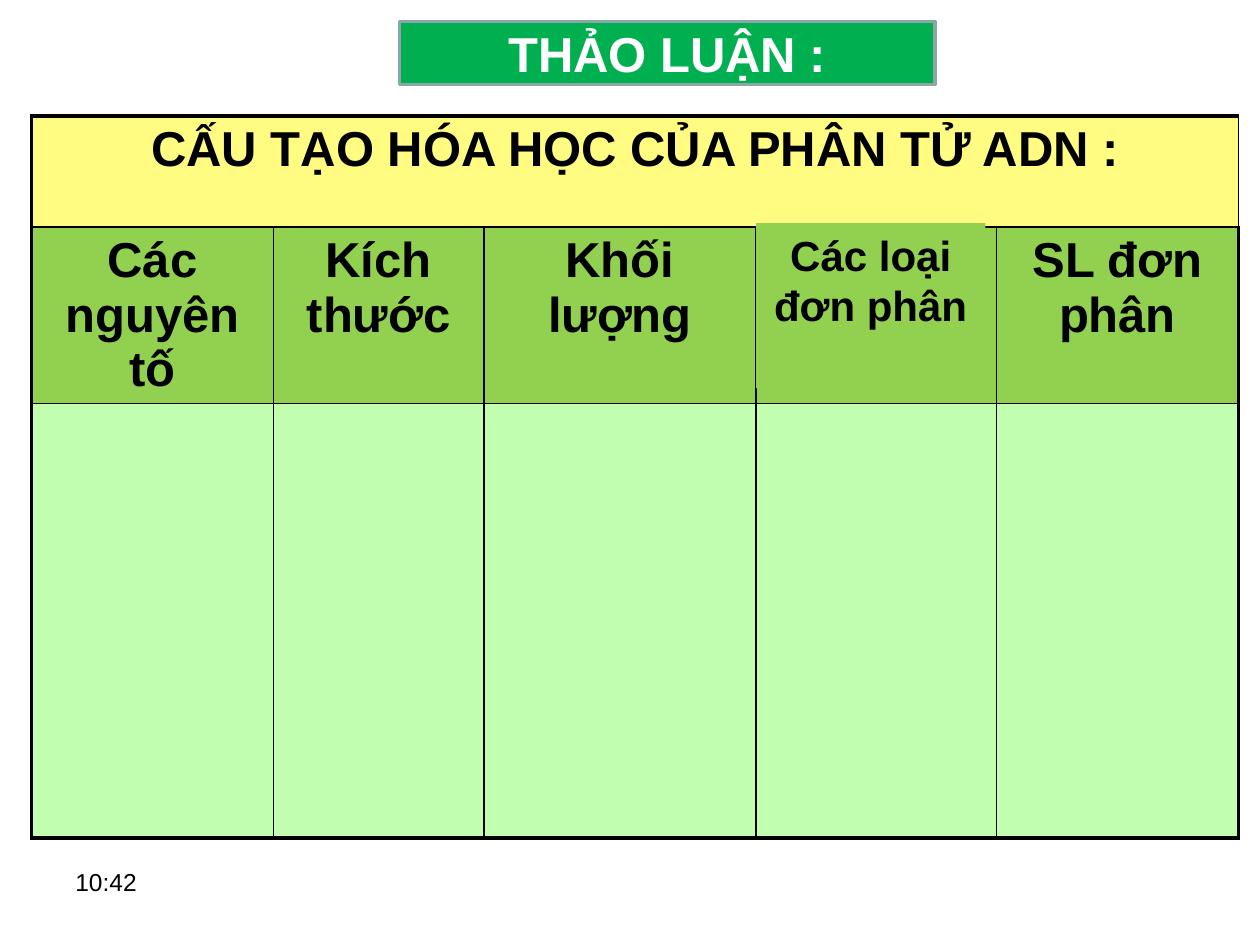
from typing import NamedTuple

from lxml import etree
from pptx import Presentation
from pptx.dml.color import RGBColor
from pptx.enum.shapes import MSO_SHAPE
from pptx.enum.text import MSO_ANCHOR, MSO_AUTO_SIZE, PP_ALIGN
from pptx.oxml.ns import qn
from pptx.util import Inches, Pt

CENTER, LEFT = PP_ALIGN.CENTER, PP_ALIGN.LEFT
TOP, MIDDLE = MSO_ANCHOR.TOP, MSO_ANCHOR.MIDDLE
RECTANGLE = MSO_SHAPE.RECTANGLE
NO_AUTOFIT = MSO_AUTO_SIZE.NONE

BLACK = RGBColor(0x00, 0x00, 0x00)
WHITE = RGBColor(0xFF, 0xFF, 0xFF)
BANNER_GREEN = RGBColor(0x00, 0xB0, 0x50)
BANNER_EDGE = RGBColor(0x8A, 0xA6, 0xA8)
YELLOW = RGBColor(0xFF, 0xFC, 0x81)
HEADER_GREEN = RGBColor(0x92, 0xD0, 0x50)
PALE_GREEN = RGBColor(0xC1, 0xFE, 0xB0)

OUTER_BORDER, INNER_BORDER = 2.25, 1


class Column(NamedTuple):
    heading: str
    width: float


class Row(NamedTuple):
    height: float
    fill: RGBColor


# The fourth heading stands in a separate block over its cell.
COLUMNS = [
    Column("Các nguyên tố", 1.92),
    Column("Kích thước", 1.67),
    Column("Khối lượng", 2.16),
    Column("", 1.91),
    Column("SL đơn phân", 1.92),
]
ROWS = [Row(0.88, YELLOW), Row(1.29, HEADER_GREEN), Row(3.45, PALE_GREEN)]


def write(frame, text: str, size: float, color: RGBColor = BLACK,
          bold: bool = True, align=CENTER) -> None:
    frame.text = text
    paragraph = frame.paragraphs[0]
    paragraph.alignment = align
    for run in paragraph.runs:
        run.font.name = "Arial"
        run.font.size = Pt(size)
        run.font.bold = bold
        run.font.color.rgb = color


def set_border(cell, side: str, points: float) -> None:
    properties = cell._tc.get_or_add_tcPr()
    line = etree.SubElement(properties, qn(f"a:ln{side}"), w=str(Pt(points)))
    fill = etree.SubElement(line, qn("a:solidFill"))
    etree.SubElement(fill, qn("a:srgbClr"), val=str(BLACK))


def add_banner(slide) -> None:
    banner = slide.shapes.title
    banner.left, banner.top = Inches(3.17), Inches(0.17)
    banner.width, banner.height = Inches(4.25), Inches(0.5)
    banner.fill.solid()
    banner.fill.fore_color.rgb = BANNER_GREEN
    banner.line.color.rgb = BANNER_EDGE
    banner.line.width = Pt(2)
    frame = banner.text_frame
    frame.auto_size = NO_AUTOFIT
    frame.vertical_anchor = MIDDLE
    write(frame, "THẢO LUẬN :", 28, WHITE)


def add_structure_table(slide) -> None:
    table = slide.shapes.add_table(
        len(ROWS), len(COLUMNS), Inches(0.25), Inches(0.92),
        Inches(sum(column.width for column in COLUMNS)),
        Inches(sum(row.height for row in ROWS))).table
    table.first_row = table.horz_banding = False
    last_row, last_column = len(ROWS) - 1, len(COLUMNS) - 1

    for c, column in enumerate(COLUMNS):
        table.columns[c].width = Inches(column.width)
    for r, row in enumerate(ROWS):
        table.rows[r].height = Inches(row.height)
        for c in range(len(COLUMNS)):
            cell = table.cell(r, c)
            on_edge = {"L": c == 0, "R": c == last_column,
                       "T": r == 0, "B": r == last_row}
            for side, outer in on_edge.items():
                set_border(cell, side, OUTER_BORDER if outer else INNER_BORDER)
            cell.fill.solid()
            cell.fill.fore_color.rgb = row.fill

    heading = table.cell(0, 0)
    heading.merge(table.cell(0, last_column))
    write(heading.text_frame, "CẤU TẠO HÓA HỌC CỦA PHÂN TỬ ADN :", 28)
    for c, column in enumerate(COLUMNS):
        if column.heading:
            write(table.cell(1, c).text_frame, column.heading, 28)


def add_unit_types_heading(slide) -> None:
    block = slide.shapes.add_shape(
        RECTANGLE, Inches(6), Inches(1.77), Inches(1.82), Inches(1.31))
    block.shadow.inherit = False
    block.fill.solid()
    block.fill.fore_color.rgb = HEADER_GREEN
    block.line.fill.background()
    block.text_frame.word_wrap = True
    block.text_frame.vertical_anchor = TOP
    write(block.text_frame, "Các loại đơn phân", 24)


def add_time(slide) -> None:
    time = slide.shapes.add_textbox(
        Inches(0.5), Inches(6.83), Inches(2.33), Inches(0.52))
    time.text_frame.word_wrap = True
    write(time.text_frame, "10:42", 14, bold=False, align=LEFT)


def main() -> None:
    presentation = Presentation()
    presentation.slide_width = Inches(10)
    presentation.slide_height = Inches(7.5)
    title_only = presentation.slide_layouts[5]
    slide = presentation.slides.add_slide(title_only)
    add_banner(slide)
    add_structure_table(slide)
    add_unit_types_heading(slide)
    add_time(slide)
    presentation.save("out.pptx")


if __name__ == "__main__":
    main()
